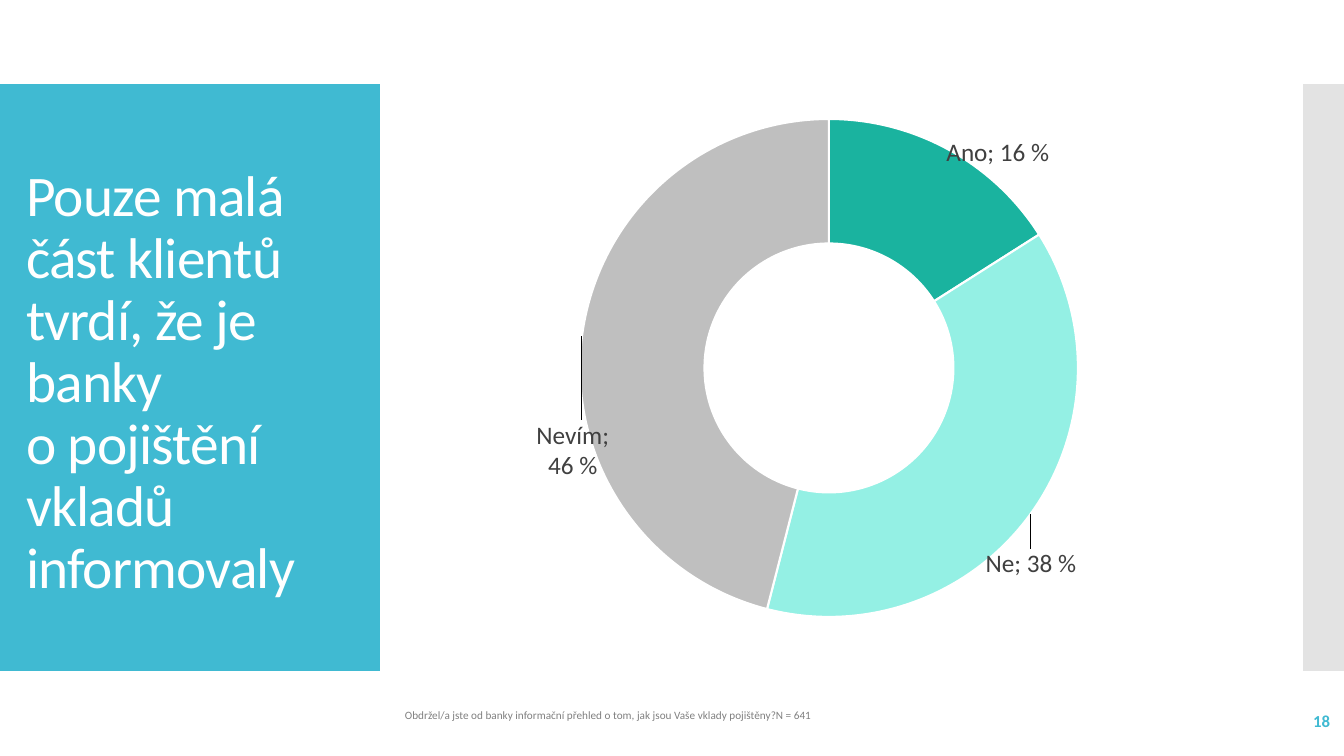
from dataclasses import dataclass
from lxml import etree
from pptx import Presentation, util as u
from pptx.chart.data import CategoryChartData
from pptx.dml.color import RGBColor
from pptx.enum import chart as ch, shapes, text
from pptx.oxml import ns

TITLE = "Pouze malá část klientů tvrdí, že je banky\vo pojištění vkladů informovaly"
FOOTNOTE = "Obdržel/a jste od banky informační přehled o tom, jak jsou Vaše vklady pojištěny?N = 641"
PAGE_NUMBER = "18"
ANSWERS = [
    {"name": "Ano", "share": 16, "color": "1AB39F", "label": "Ano; 16 %", "shift": (79, -52)},
    {"name": "Ne", "share": 38, "color": "94F0E4", "label": "Ne; 38 %", "shift": (51, 86)},
    {"name": "Nevím", "share": 46, "color": "BFBFBF", "label": "Nevím;\n46 %", "shift": (-71, 106)},
]
PAGE = (1344, 756)
TITLE_PANEL = (0, 84, 380, 587)
EDGE_PANEL = (1303, 84, 41, 587)
TITLE_BOX = (16, 130, 337, 507)
NUMBER_BOX = (1172, 701, 168, 40)
CHART_BOX = (524, 105, 599, 526)
RING_BOX = (580, 119, 498, 498)
FOOTNOTE_BOX = (395, 699, 907, 34)


@dataclass(frozen=True)
class Theme:
    font: str = "Calibri"
    accent: str = "40BAD2"
    edge: str = "E3E3E3"
    white: str = "FFFFFF"
    label: str = "404040"
    muted: str = "808080"
    title_size: int = 41
    label_size: int = 18
    number_size: int = 12
    note_size: int = 8


THEME = Theme()


def px(length):
    return u.Emu(round(length * 914400 / 100.8))


def place(box):
    return [px(length) for length in box]


def style(font, size, color, bold=False):
    font.name, font.size, font.bold = THEME.font, u.Pt(size), bold
    font.color.rgb = RGBColor.from_string(color)


def fill_text(shape, words, size, color, align=text.PP_ALIGN.LEFT, spacing=1.0, bold=False):
    frame = shape.text_frame
    frame.text = words
    frame.word_wrap = True
    frame.auto_size = text.MSO_AUTO_SIZE.NONE
    frame.vertical_anchor = text.MSO_ANCHOR.MIDDLE
    para = frame.paragraphs[0]
    para.alignment, para.line_spacing = align, spacing
    para.space_before = u.Pt(0)
    for span in para.runs:
        style(span.font, size, color, bold)
    return para


def add_panel(page, box, color):
    panel = page.shapes.add_shape(shapes.MSO_SHAPE.RECTANGLE, *place(box))
    panel.shadow.inherit = False
    panel.fill.solid()
    panel.fill.fore_color.rgb = RGBColor.from_string(color)
    panel.line.fill.background()


def set_layout(parent, position, **values):
    layout = parent.find(ns.qn("c:layout"))
    if layout is None:
        layout = etree.Element(ns.qn("c:layout"))
        parent.insert(position, layout)
    manual = etree.SubElement(layout, ns.qn("c:manualLayout"))
    for name, value in values.items():
        etree.SubElement(manual, ns.qn(f"c:{name}")).set("val", str(value))


def add_ring(page):
    data = CategoryChartData(number_format="0")
    data.categories = [answer["name"] for answer in ANSWERS]
    data.add_series("Series 1", [answer["share"] for answer in ANSWERS])
    chart = page.shapes.add_chart(ch.XL_CHART_TYPE.DOUGHNUT, *place(CHART_BOX), data).chart
    chart.has_legend = chart.has_title = False
    style(chart.font, THEME.label_size, THEME.label)
    left, top, width, height = CHART_BOX
    ring_left, ring_top, ring_width, ring_height = RING_BOX
    set_layout(chart.element.find(".//" + ns.qn("c:plotArea")), 0,
               layoutTarget="inner", xMode="edge", yMode="edge",
               x=round((ring_left - left) / width, 4), y=round((ring_top - top) / height, 4),
               w=round(ring_width / width, 4), h=round(ring_height / height, 4))
    plot = chart.plots[0]
    plot.vary_by_categories = True
    series = plot.series[0]
    for index, answer in enumerate(ANSWERS):
        point = series.points[index]
        point.format.fill.solid()
        point.format.fill.fore_color.rgb = RGBColor.from_string(answer["color"])
        point.format.line.color.rgb = RGBColor.from_string(THEME.white)
        point.format.line.width = u.Pt(1.5)
        frame = point.data_label.text_frame
        frame.text = answer["label"]
        for para in frame.paragraphs:
            for span in para.runs:
                style(span.font, THEME.label_size, THEME.label)
    for label, answer in zip(chart.element.iter(ns.qn("c:dLbl")), ANSWERS):
        across, down = answer["shift"]
        set_layout(label, 1, x=round(across / width, 4), y=round(down / height, 4))
    for hole in chart.element.iter(ns.qn("c:holeSize")):
        hole.set("val", "71")


def main():
    deck = Presentation()
    deck.slide_width, deck.slide_height = place(PAGE)
    page = deck.slides.add_slide(deck.slide_layouts[5])
    add_panel(page, TITLE_PANEL, THEME.accent)
    add_panel(page, EDGE_PANEL, THEME.edge)

    title = page.shapes.title
    title.left, title.top, title.width, title.height = place(TITLE_BOX)
    para = fill_text(title, TITLE, THEME.title_size, THEME.white, spacing=0.9)
    for span in para.runs:
        span.font._element.set("spc", "-60")
    page.shapes.element.append(title.element)

    number = page.shapes.add_textbox(*place(NUMBER_BOX))
    fill_text(number, PAGE_NUMBER, THEME.number_size, THEME.accent, text.PP_ALIGN.RIGHT, bold=True)
    add_ring(page)
    footnote = page.shapes.add_textbox(*place(FOOTNOTE_BOX))
    fill_text(footnote, FOOTNOTE, THEME.note_size, THEME.muted, spacing=0.9)
    deck.save("out.pptx")


if __name__ == "__main__":
    main()
